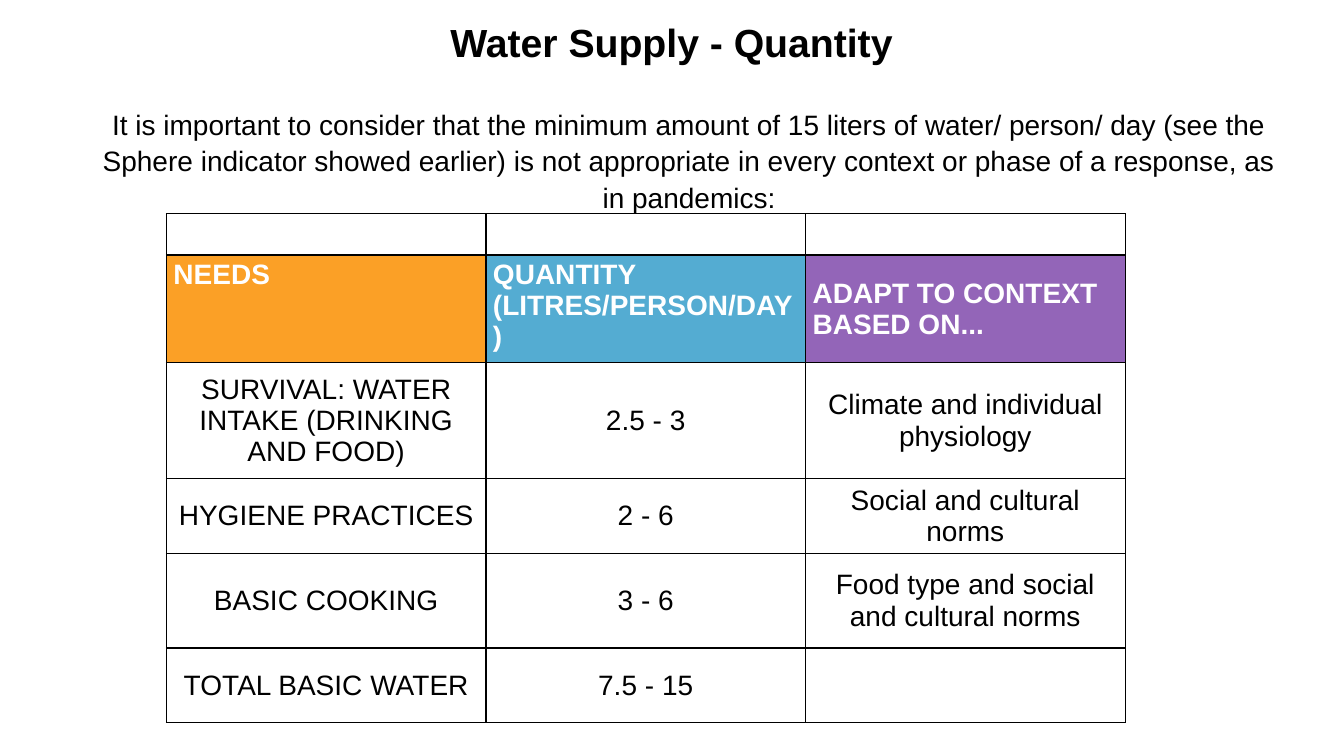
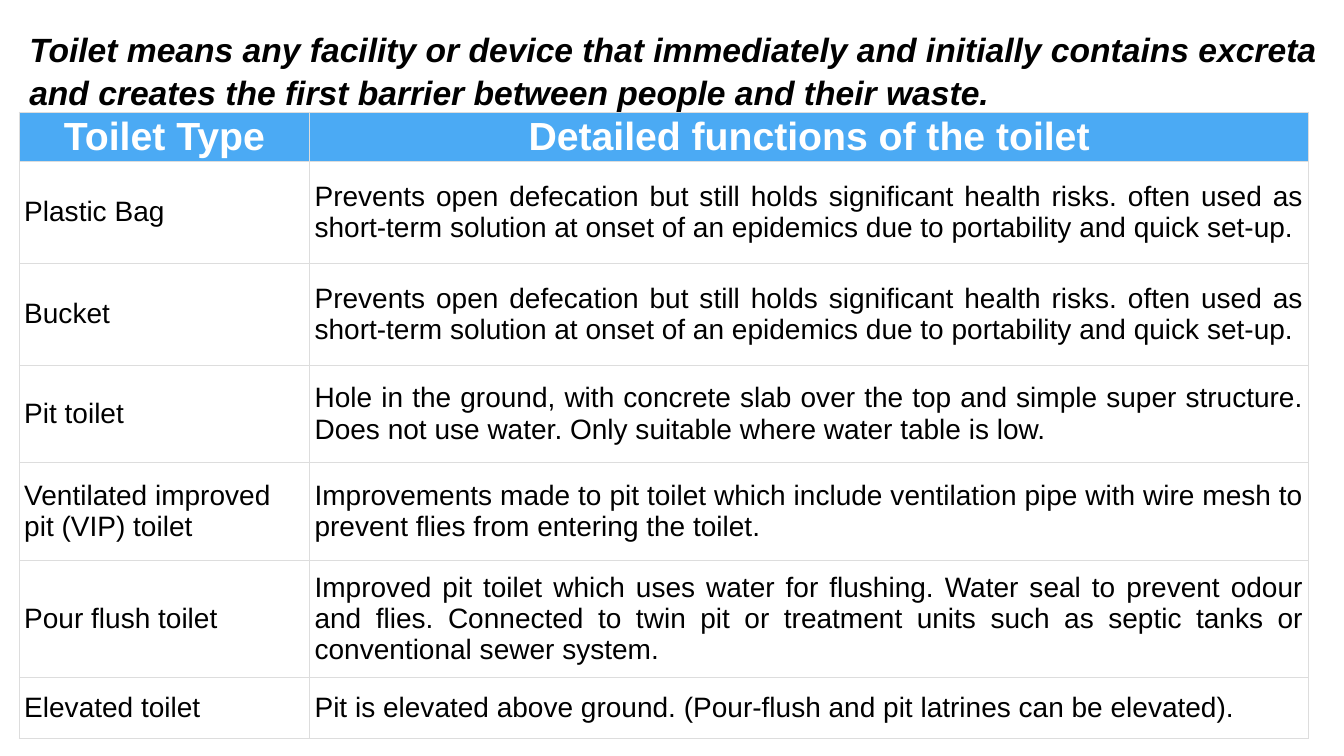
from dataclasses import dataclass
from pptx import Presentation
from pptx.dml.color import RGBColor
from pptx.enum import text as kinds
from pptx.oxml import parse_xml, ns
from pptx.util import Inches, Pt

ALIGN = kinds.PP_ALIGN
ANCHOR = kinds.MSO_ANCHOR


@dataclass(frozen=True)
class Theme:
    font: str = "Arial"
    black: str = "000000"
    white: str = "FFFFFF"
    orange: str = "FBA026"
    teal: str = "54ACD2"
    purple: str = "9365B8"
    blue: str = "4BAAF4"
    rule: str = "DDDDDD"
    heading: int = 28
    statement: int = 24
    body: int = 20
    spacing: float = 1.08


THEME = Theme()
PLAIN = dict(size=THEME.body, color=THEME.black, bold=False)
BAG_AND_BUCKET = (
    "Prevents open defecation but still holds significant health risks. often used as "
    "short-term solution at onset of an epidemics due to portability and quick set-up."
)

QUANTITY = dict(
    layout=1,
    title=dict(
        text="Water Supply - Quantity", at=(4.34, 0.13, 4.64, 0.57), wrap=False,
        look=dict(size=THEME.heading, color=THEME.black, bold=True),
        para=dict(alignment=ALIGN.CENTER),
    ),
    body=dict(
        text="It is important to consider that the minimum amount of 15 liters of water/ person/ day "
        "(see the Sphere indicator showed earlier) is not appropriate in every context or phase "
        "of a response, as in pandemics:",
        at=(0.8, 0.99, 12.07, 1.11), wrap=True, look=PLAIN,
        para=dict(alignment=ALIGN.CENTER, line_spacing=THEME.spacing),
    ),
    table=dict(
        at=(1.65, 2.12), columns=[3.17] * 3, heights=[0.41, 1.07, 1.15, 0.74, 0.94, 0.74],
        margins=(0.07, 0.04), border=(THEME.black, 1), header=1,
        header_fills=[THEME.orange, THEME.teal, THEME.purple],
        header_look=dict(size=THEME.body, color=THEME.white, bold=True),
        header_align=ALIGN.LEFT, header_anchors=[ANCHOR.TOP, ANCHOR.TOP, ANCHOR.MIDDLE],
        aligns=[ALIGN.CENTER] * 3,
        rows=[
            ("", "", ""),
            ("NEEDS", "QUANTITY (LITRES/PERSON/DAY)", "ADAPT TO CONTEXT\vBASED ON..."),
            ("SURVIVAL: WATER INTAKE (DRINKING AND FOOD)", "2.5 - 3", "Climate and individual physiology"),
            ("HYGIENE PRACTICES", "2 - 6", "Social and cultural norms"),
            ("BASIC COOKING", "3 - 6", "Food type and social\vand cultural norms"),
            ("TOTAL BASIC WATER", "7.5 - 15", ""),
        ],
    ),
)

TOILETS = dict(
    layout=5,
    title=dict(
        text="Toilet means any facility or device that immediately and initially contains excreta "
        "and creates the first barrier between people and their waste.",
        at=(0.19, 0.2, 12.99, 0.91), wrap=True,
        look=dict(size=THEME.statement, color=THEME.black, bold=True, italic=True),
        para=dict(alignment=ALIGN.LEFT, line_spacing=THEME.spacing),
    ),
    table=dict(
        at=(0.19, 1.11), columns=[2.88, 9.91], heights=[0.49, 1.01, 1.01, 0.97, 0.97, 1.16, 0.61],
        margins=(0.05, 0.02), border=(THEME.rule, 0.5), header=0,
        header_fills=[THEME.blue] * 2,
        header_look=dict(size=THEME.heading, color=THEME.white, bold=True),
        header_align=ALIGN.CENTER, header_anchors=[ANCHOR.MIDDLE] * 2,
        aligns=[ALIGN.LEFT, ALIGN.JUSTIFY],
        rows=[
            ("Toilet Type", "Detailed functions of the toilet"),
            ("Plastic Bag", BAG_AND_BUCKET),
            ("Bucket", BAG_AND_BUCKET),
            ("Pit toilet", "Hole in the ground, with concrete slab over the top and simple super structure. "
             "Does not use water. Only suitable where water table is low."),
            ("Ventilated improved pit (VIP) toilet", "Improvements made to pit toilet which include "
             "ventilation pipe with wire mesh to prevent flies from entering the toilet."),
            ("Pour flush toilet", "Improved pit toilet which uses water for flushing. Water seal to prevent "
             "odour and flies. Connected to twin pit or treatment units such as septic tanks or "
             "conventional sewer system."),
            ("Elevated toilet", "Pit is elevated above ground. (Pour-flush and pit latrines can be elevated)."),
        ],
    ),
)


def assign(target, values):
    for name, value in values.items():
        setattr(target, name, value)


def write(frame, words, look, para_format):
    para = frame.paragraphs[0]
    assign(para, para_format)
    if not words:
        return para
    for number, line in enumerate(words.split("\v")):
        if number:
            para.add_line_break()
        span = para.add_run()
        span.text = line
        values = dict(look, name=THEME.font, size=Pt(look["size"]))
        span.font.color.rgb = RGBColor.from_string(values.pop("color"))
        assign(span.font, values)
    return para


def fill_placeholder(box, content):
    assign(box, dict(zip(("left", "top", "width", "height"), map(Inches, content["at"]))))
    frame = box.text_frame
    assign(frame, dict(word_wrap=content["wrap"], auto_size=kinds.MSO_AUTO_SIZE.NONE,
                       vertical_anchor=ANCHOR.TOP))
    spacing = dict(space_before=Pt(0), **content["para"])
    return write(frame, content["text"], content["look"], spacing)


def remove_bullet(para):
    properties = para._p.get_or_add_pPr()
    assign_indent = {"marL": "0", "indent": "0"}
    for name, value in assign_indent.items():
        properties.set(name, value)
    properties.append(parse_xml(f"<a:buNone {ns.nsdecls('a')}/>"))


def set_borders(cell, color, points):
    properties = cell._tc.get_or_add_tcPr()
    for place, side in enumerate("LRTB"):
        properties.insert(place, parse_xml(
            f'<a:ln{side} {ns.nsdecls("a")} w="{Pt(points)}"><a:solidFill>'
            f'<a:srgbClr val="{color}"/></a:solidFill></a:ln{side}>'))


def add_grid(page, content):
    rows, columns, heights = content["rows"], content["columns"], content["heights"]
    extent = (*content["at"], sum(columns), sum(heights))
    table = page.shapes.add_table(len(rows), len(columns), *map(Inches, extent)).table
    assign(table, dict(first_row=False, horz_banding=False))
    for column, width in zip(table.columns, columns):
        column.width = Inches(width)
    side, end = map(Inches, content["margins"])
    for row_number, (row, height) in enumerate(zip(rows, heights)):
        table.rows[row_number].height = Inches(height)
        is_header = row_number == content["header"]
        for column_number, words in enumerate(row):
            cell = table.cell(row_number, column_number)
            color, look = THEME.white, PLAIN
            anchor, align = ANCHOR.MIDDLE, content["aligns"][column_number]
            if is_header:
                color, look = content["header_fills"][column_number], content["header_look"]
                anchor, align = content["header_anchors"][column_number], content["header_align"]
            assign(cell, dict(margin_left=side, margin_right=side, margin_top=end,
                              margin_bottom=end, vertical_anchor=anchor))
            cell.fill.solid()
            cell.fill.fore_color.rgb = RGBColor.from_string(color)
            set_borders(cell, *content["border"])
            write(cell.text_frame, words, look, dict(alignment=align))


def main():
    deck = Presentation()
    assign(deck, dict(slide_width=Inches(13.33), slide_height=Inches(7.5)))
    for content in (QUANTITY, TOILETS):
        page = deck.slides.add_slide(deck.slide_layouts[content["layout"]])
        fill_placeholder(page.shapes.title, content["title"])
        if "body" in content:
            remove_bullet(fill_placeholder(page.placeholders[1], content["body"]))
        add_grid(page, content["table"])
    deck.save("out.pptx")


if __name__ == "__main__":
    main()
